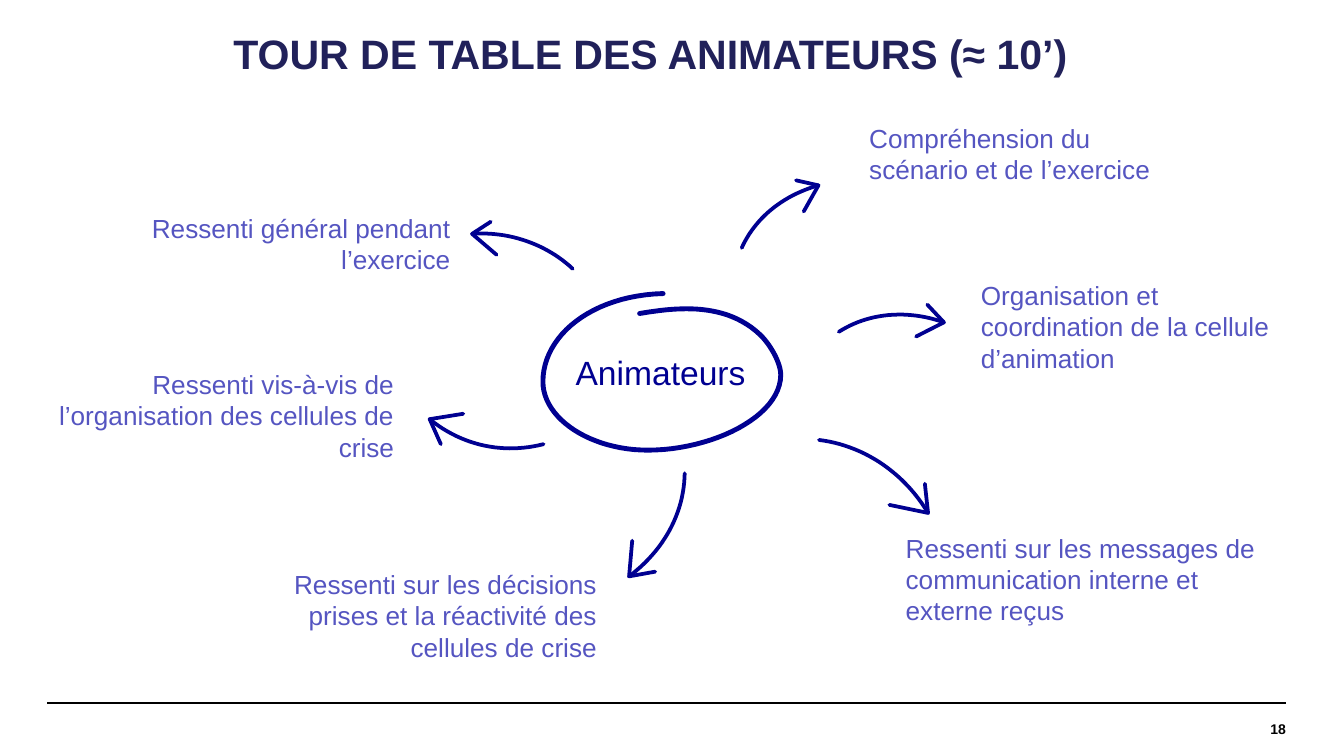
from dataclasses import dataclass

from lxml.etree import SubElement
from pptx import Presentation
from pptx.dml.color import RGBColor
from pptx.enum.shapes import MSO_CONNECTOR
from pptx.enum.text import MSO_ANCHOR, MSO_AUTO_SIZE, PP_ALIGN
from pptx.oxml.ns import qn
from pptx.util import Pt


@dataclass(frozen=True)
class Theme:
    font: str = "Arial"
    title: str = "21215A"
    topic: str = "5555C1"
    ink: str = "000091"
    black: str = "000000"
    title_size: float = 22
    center_size: float = 18
    topic_size: float = 14
    number_size: float = 7.5
    arrow_width: float = 2
    loop_width: float = 2.6
    rule_width: float = 0.8


THEME = Theme()
LEFT, CENTER, RIGHT = PP_ALIGN.LEFT, PP_ALIGN.CENTER, PP_ALIGN.RIGHT
CURVE_STEPS = 24

TOPICS = [
    ("Ressenti général pendant l’exercice", (59, 110.2, 189.4, 41), RIGHT),
    ("Ressenti vis-à-vis de l’organisation des cellules de crise", (10.1, 193.7, 208.1, 58.3), RIGHT),
    ("Ressenti sur les décisions prises et la réactivité des cellules de crise", (118.8, 301, 208.1, 58.3), RIGHT),
    ("Compréhension du scénario et de l’exercice", (458.6, 61.9, 189.4, 41), LEFT),
    ("Organisation et coordination de la cellule d’animation", (518.4, 146.2, 189.4, 41), LEFT),
    ("Ressenti sur les messages de communication interne et externe reçus", (478.1, 281.5, 205.2, 58.3), LEFT),
]

# Each arrow: shaft start, two curve controls, tip, then the two barb ends.
ARROWS = [
    [(438.8, 235.7), (461.5, 238.5), (483.5, 252), (497.2, 274.8), (495.5, 259.2), (476.5, 270.5)],
    [(397.4, 132.8), (404.3, 117.5), (418.5, 105), (438.5, 99.3), (426.5, 96.6), (430.6, 113.3)],
    [(366.8, 253.6), (366.5, 275), (355.5, 295), (337, 308.8), (351, 306.3), (338.7, 289.7)],
    [(449.4, 177.8), (465, 167.8), (485.5, 165.6), (505.7, 172.7), (496.8, 163.2), (490.8, 180.3)],
    [(306.8, 144), (293, 131), (273, 123.8), (252.9, 125.3), (262.9, 118.8), (266, 136.5)],
    [(291.2, 238), (270.7, 243.3), (248.4, 239.4), (230.2, 224.6), (236.2, 238), (248.2, 221.7)],
]

LOOP = [
    (342.7, 168),
    (363.6, 164.5), (388.8, 162), (407.2, 179.3),
    (411.8, 183.6), (418.3, 193.7), (418.3, 200.9),
    (418.3, 223.2), (381.6, 241.2), (347, 241.2),
    (316.8, 241.2), (290.9, 224.6), (290.9, 204.5),
    (290.9, 180), (316.8, 158.4), (355.3, 157.3),
]


def color(code):
    return RGBColor.from_string(code)


def add_text(page, text, place, *, size, ink, bold=False, align=LEFT,
             anchor=MSO_ANCHOR.TOP, inset=(7.2, 3.6), spacing=None, indent=0, grow=False):
    box = page.shapes.add_textbox(*(Pt(value) for value in place))
    frame = box.text_frame
    frame.word_wrap = True
    frame.auto_size = MSO_AUTO_SIZE.SHAPE_TO_FIT_TEXT if grow else MSO_AUTO_SIZE.NONE
    frame.vertical_anchor = anchor
    frame.margin_left = frame.margin_right = Pt(inset[0])
    frame.margin_top = frame.margin_bottom = Pt(inset[1])
    para = frame.paragraphs[0]
    para.alignment = align
    para.line_spacing = spacing
    if indent:
        para._p.get_or_add_pPr().set("marL", str(Pt(indent)))
    span = para.add_run()
    span.text = text
    span.font.name = THEME.font
    span.font.size = Pt(size)
    span.font.bold = bold
    span.font.color.rgb = color(ink)


def curve_points(nodes):
    points = [nodes[0]]
    for first in range(0, len(nodes) - 1, 3):
        corners = nodes[first:first + 4]
        for step in range(1, CURVE_STEPS + 1):
            t = step / CURVE_STEPS
            weights = ((1 - t) ** 3, 3 * t * (1 - t) ** 2, 3 * t * t * (1 - t), t ** 3)
            points.append(tuple(sum(w * corner[axis] for w, corner in zip(weights, corners))
                                for axis in (0, 1)))
    return points


def add_strokes(page, strokes, width):
    paths = [[(Pt(x), Pt(y)) for x, y in stroke] for stroke in strokes]
    builder = page.shapes.build_freeform(*paths[0][0])
    builder.add_line_segments(paths[0][1:], close=False)
    for path in paths[1:]:
        builder.move_to(*path[0])
        builder.add_line_segments(path[1:], close=False)
    shape = builder.convert_to_shape()
    shape.shadow.inherit = False
    shape.fill.background()
    shape.line.color.rgb = color(THEME.ink)
    shape.line.width = Pt(width)
    outline = shape.line._get_or_add_ln()
    outline.set("cap", "rnd")
    SubElement(outline, qn("a:round"))


def add_arrow(page, nodes):
    shaft, tip, barbs = nodes[:4], nodes[3], nodes[4:]
    add_strokes(page, [curve_points(shaft), [barbs[0], tip, barbs[1]]], THEME.arrow_width)


def add_rule(page, left, right, top):
    rule = page.shapes.add_connector(MSO_CONNECTOR.STRAIGHT, Pt(left), Pt(top), Pt(right), Pt(top))
    rule.line.color.rgb = color(THEME.black)
    rule.line.width = Pt(THEME.rule_width)
    SubElement(rule._element.spPr, qn("a:effectLst"))


def main():
    deck = Presentation()
    deck.slide_width, deck.slide_height = Pt(720), Pt(405)
    page = deck.slides.add_slide(deck.slide_layouts[6])

    add_rule(page, 25.2, 689, 376.6)
    add_text(page, "18", (582.5, 376.6, 106.5, 28), size=THEME.number_size, ink=THEME.black,
             bold=True, align=RIGHT, anchor=MSO_ANCHOR.MIDDLE, inset=(0, 0))
    add_text(page, "TOUR DE TABLE DES ANIMATEURS (≈ 10’)", (116.6, 5.8, 527, 48.2),
             size=THEME.title_size, ink=THEME.title, bold=True,
             anchor=MSO_ANCHOR.MIDDLE, spacing=0.9, indent=1.4)
    for text, place, align in TOPICS:
        add_text(page, text, place, size=THEME.topic_size, ink=THEME.topic, align=align, grow=True)
    for nodes in ARROWS:
        add_arrow(page, nodes)
    add_strokes(page, [curve_points(LOOP)], THEME.loop_width)
    add_text(page, "Animateurs", (263.5, 185, 180.7, 28.8), size=THEME.center_size,
             ink=THEME.ink, align=CENTER, grow=True)

    deck.save("out.pptx")


if __name__ == "__main__":
    main()
